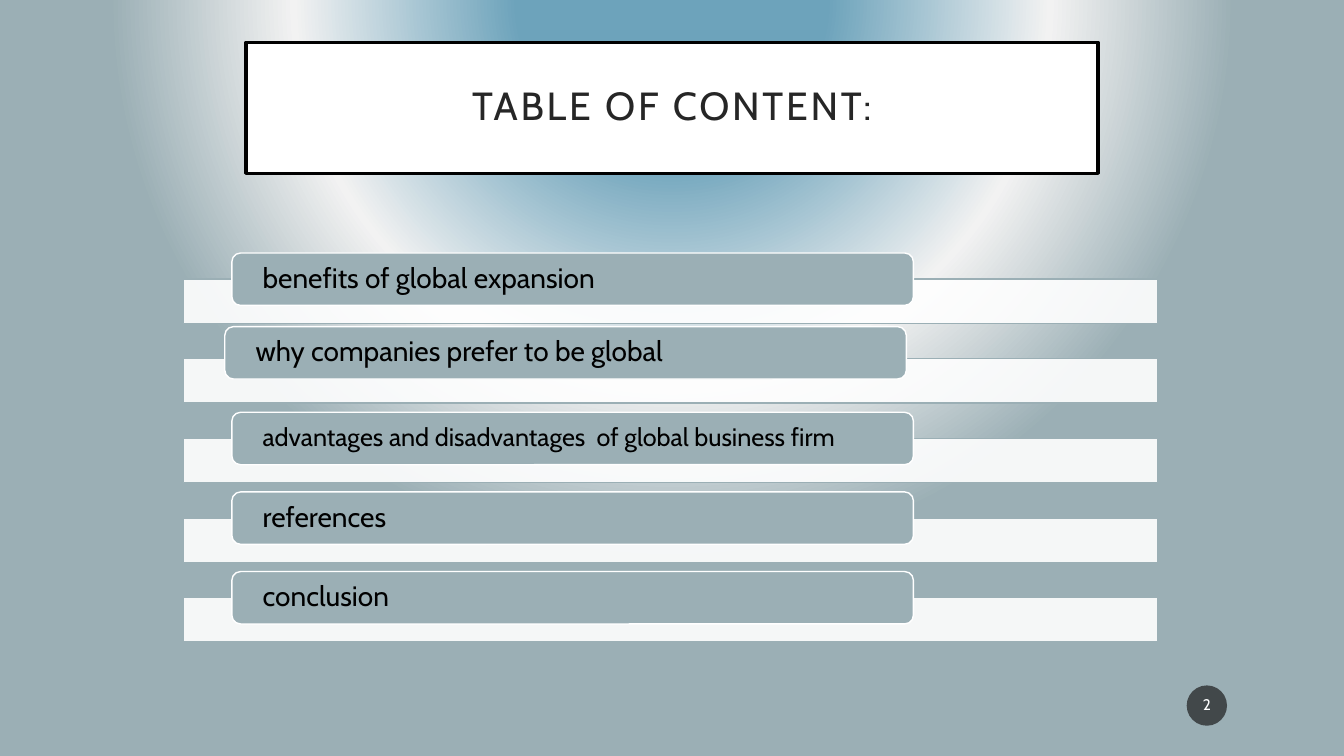
import pptx
import pptx.dml.color
import pptx.enum.shapes
import pptx.enum.text
import pptx.oxml
import pptx.oxml.ns
import pptx.util
from lxml import etree

Inches = pptx.util.Inches
Pt = pptx.util.Pt
RGBColor = pptx.dml.color.RGBColor
MSO_SHAPE = pptx.enum.shapes.MSO_SHAPE
PP_ALIGN = pptx.enum.text.PP_ALIGN
qn = pptx.oxml.ns.qn

WHITE = RGBColor(0xFF, 0xFF, 0xFF)
BLACK = RGBColor(0x00, 0x00, 0x00)
INK = RGBColor(0x26, 0x26, 0x26)
CHARCOAL = RGBColor(0x1D, 0x1D, 0x1D)
SAGE = RGBColor(0x9B, 0xAF, 0xB5)
BLUE = RGBColor(0x6D, 0xA3, 0xBB)
MIST = RGBColor(0xF2, 0xF2, 0xF2)

ROW_TOP, ROW_STEP = 2.77, 0.79
LABEL_LEFT, LABEL_RISE = 2.3, 0.26
# text, size, sideways shift, vertical shift
TOPICS = [
    ("benefits of global expansion", 20, 0, 0),
    ("why companies prefer to be global", 20, -0.07, -0.06),
    ("advantages and disadvantages  of global business firm", 18, 0, 0),
    ("references", 20, 0, 0),
    ("conclusion", 20, 0, 0),
]


class Deck:
    font = "Cabin"

    def __init__(self):
        self.prs = pptx.Presentation()
        self.prs.slide_width = Inches(13.33)
        self.prs.slide_height = Inches(7.5)
        self.s = self.prs.slides.add_slide(self.prs.slide_layouts[5])

    def background(self, stops):
        """Fill the slide with a circular gradient centred above its top edge."""
        gs = "".join(f'<a:gs pos="{pos * 1000}"><a:srgbClr val="{color}"/></a:gs>'
                     for pos, color in stops)
        bg = pptx.oxml.parse_xml(
            f'<p:bg {pptx.oxml.ns.nsdecls("p", "a")}><p:bgPr>'
            f'<a:gradFill rotWithShape="1"><a:gsLst>{gs}</a:gsLst><a:path path="circle">'
            '<a:fillToRect l="50000" t="-80000" r="50000" b="180000"/></a:path>'
            '</a:gradFill><a:effectLst/></p:bgPr></p:bg>')
        self.s.element.cSld.insert(0, bg)

    def paint(self, sp, fill, line=None, width=1, opacity=100):
        sp.fill.solid()
        sp.fill.fore_color.rgb = fill
        if opacity < 100:
            color = sp.element.spPr.find(qn("a:solidFill") + "/" + qn("a:srgbClr"))
            etree.SubElement(color, qn("a:alpha")).set("val", str(opacity * 1000))
        if line is None:
            sp.line.fill.background()
        else:
            sp.line.color.rgb = line
            sp.line.width = Pt(width)

    def text(self, sp, words, size, color, align, inset, spacing=None):
        tf = sp.text_frame
        tf.word_wrap = True
        tf.auto_size = pptx.enum.text.MSO_AUTO_SIZE.NONE
        tf.vertical_anchor = pptx.enum.text.MSO_ANCHOR.MIDDLE
        tf.margin_left = tf.margin_right = Inches(inset[0])
        tf.margin_top = tf.margin_bottom = Inches(inset[1])
        p = tf.paragraphs[0]
        p.alignment = align
        p.line_spacing = 0.9
        r = p.add_run()
        r.text = words
        r.font.name = self.font
        r.font.size = Pt(size)
        r.font.color.rgb = color
        if spacing:
            sp.element.find(".//" + qn("a:rPr")).set("spc", str(spacing * 100))

    def title(self, words, left, top, width, height):
        sp = self.s.shapes.title
        sp.left, sp.top = Inches(left), Inches(top)
        sp.width, sp.height = Inches(width), Inches(height)
        self.paint(sp, WHITE, BLACK, 2.5)
        self.text(sp, words, 28, INK, PP_ALIGN.CENTER, (0.2, 0.2), spacing=2)

    def shape(self, shapes, kind, left, top, width, height, **style):
        sp = shapes.add_shape(kind, Inches(left), Inches(top), Inches(width), Inches(height))
        sp.shadow.inherit = False
        self.paint(sp, **style)
        return sp

    def topics(self, rows):
        """Group of pale bars, each with a rounded label on its upper edge."""
        shapes = self.s.shapes.add_group_shape().shapes
        for i, (words, size, dx, dy) in enumerate(rows):
            top = ROW_TOP + i * ROW_STEP
            self.shape(shapes, MSO_SHAPE.RECTANGLE, 1.82, top, 9.66, 0.44,
                       fill=WHITE, line=SAGE, opacity=90)
            label = self.shape(shapes, MSO_SHAPE.ROUNDED_RECTANGLE, LABEL_LEFT + dx,
                               top - LABEL_RISE + dy, 6.76, 0.52, fill=SAGE, line=WHITE)
            self.text(label, words, size, BLACK, PP_ALIGN.LEFT, (0.28, 0))

    def page_number(self, words):
        sp = self.shape(self.s.shapes, MSO_SHAPE.OVAL, 11.77, 6.8, 0.4, 0.4,
                        fill=CHARCOAL, opacity=70)
        self.text(sp, words, 11, WHITE, PP_ALIGN.CENTER, (0.02, 0.05))


def main():
    deck = Deck()
    deck.background([(20, BLUE), (49, MIST), (73, SAGE)])
    deck.title("TABLE OF CONTENT:", 2.44, 0.42, 8.45, 1.3)
    deck.topics(TOPICS)
    deck.page_number("2")
    deck.prs.save("out.pptx")


if __name__ == "__main__":
    main()
